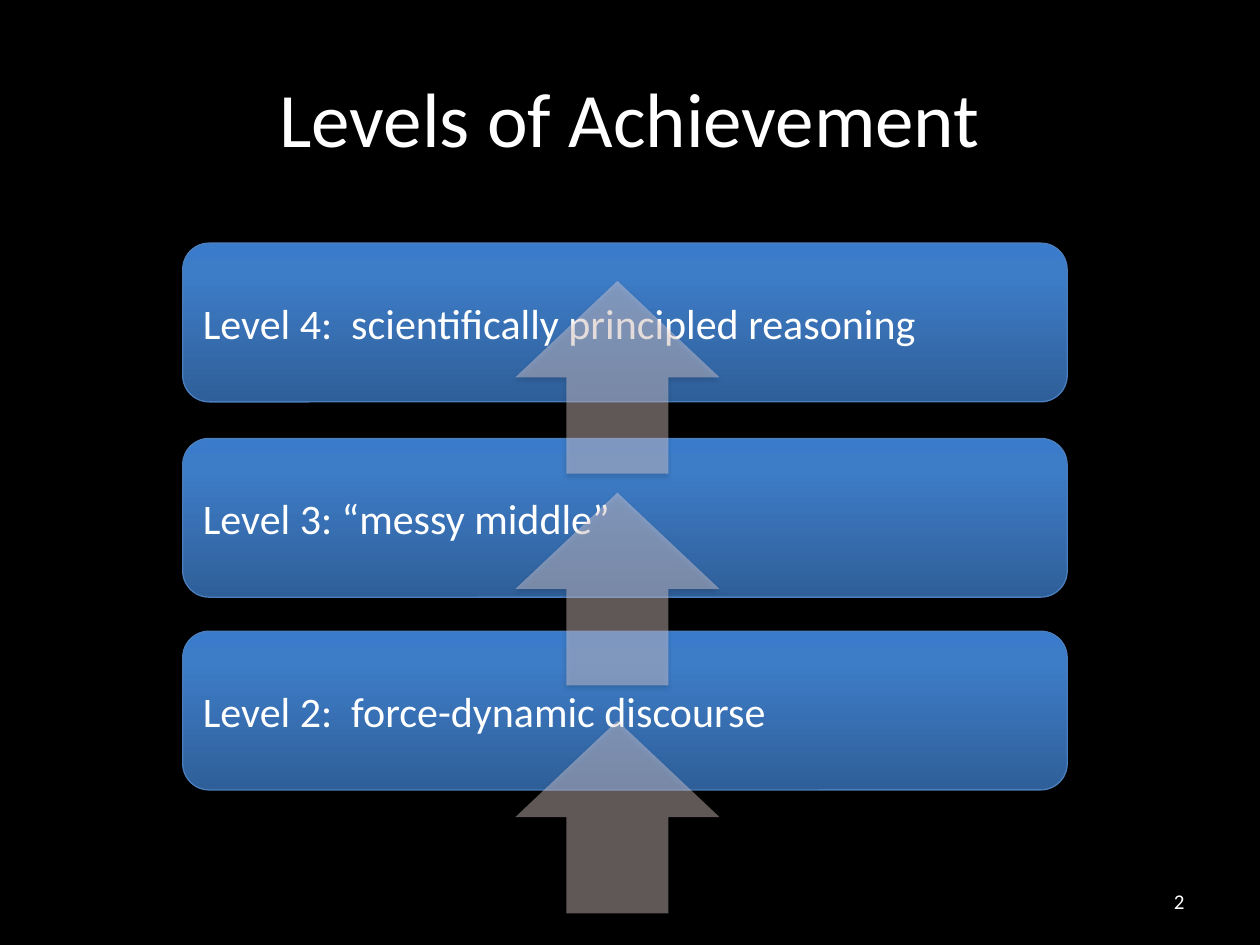
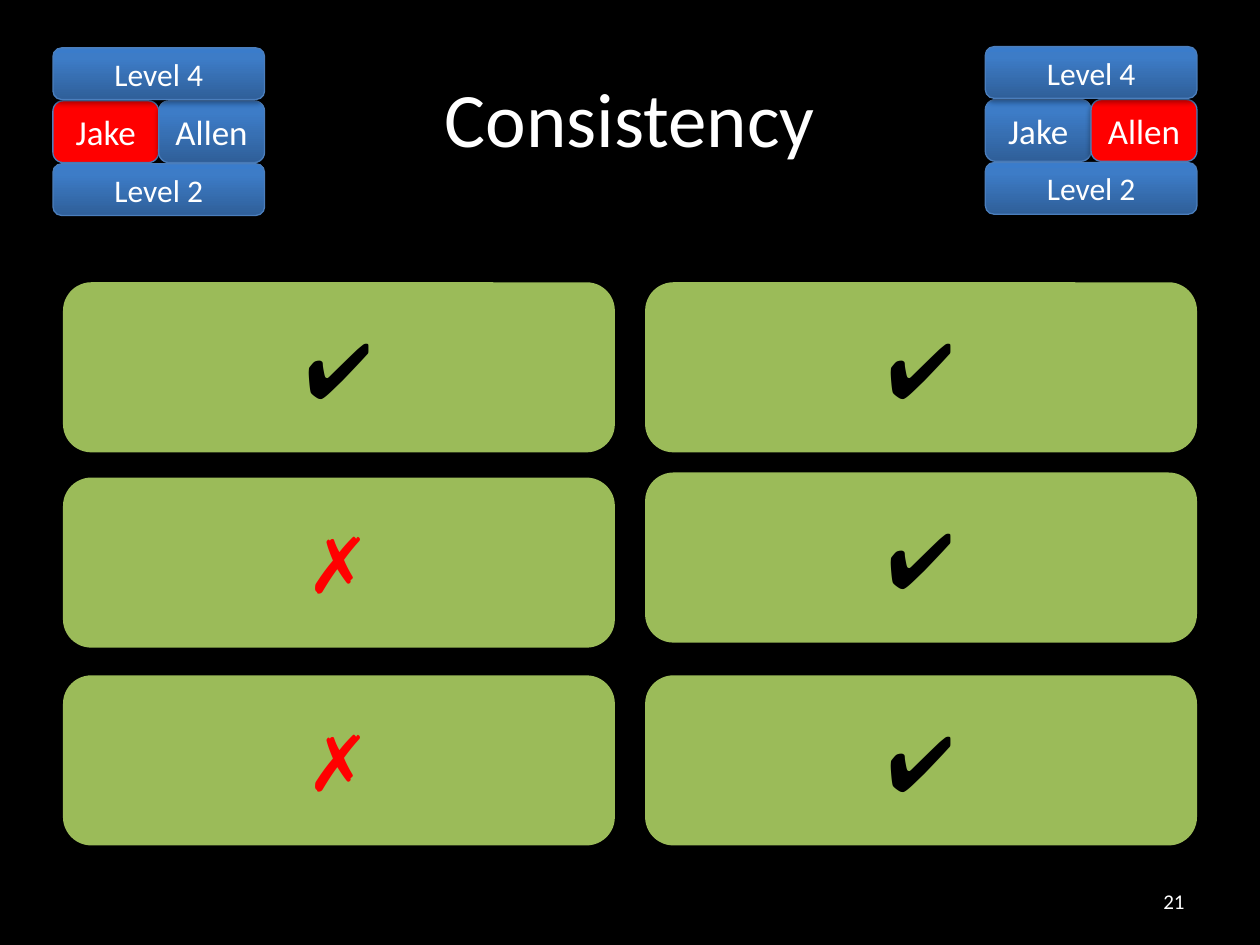
from pptx import Presentation
from pptx.dml.color import RGBColor
from pptx.enum.shapes import MSO_SHAPE
from pptx.enum.text import MSO_ANCHOR, PP_ALIGN
from pptx.oxml import parse_xml
from pptx.oxml.ns import nsdecls, qn
from pptx.util import Inches, Pt

COLORS = {
    "background": "000000",
    "text": "FFFFFF",
    "blue_dark": "2F5F99",
    "blue_mid": "3D7CC7",
    "blue_light": "3A7CCB",
    "outline": "4B7EBC",
    "arrow": "F2DCDB",
    "answer": "9BBB59",
    "yes": "000000",
    "no": "FF0000",
    "highlight": "FF0000",
}
BLUE_STOPS = [(0, "blue_dark"), (80, "blue_mid"), (100, "blue_light")]
LEVEL = MSO_SHAPE.FLOWCHART_ALTERNATE_PROCESS


def write(holder, text, size, color="text", align=PP_ALIGN.CENTER, font="Calibri"):
    frame = holder.text_frame
    frame.word_wrap = True
    frame.vertical_anchor = MSO_ANCHOR.MIDDLE
    line = frame.paragraphs[0]
    line.text = text
    line.alignment = align
    line.font.size = Pt(size)
    line.font.name = font
    line.font.color.rgb = RGBColor.from_string(COLORS[color])


def add_panel(slide, kind, left, top, width, height, fill=None, outlined=True):
    panel = slide.shapes.add_shape(
        kind, Inches(left), Inches(top), Inches(width), Inches(height))
    properties = panel._element.spPr
    if fill:
        panel.fill.solid()
        panel.fill.fore_color.rgb = RGBColor.from_string(COLORS[fill])
    else:
        panel.fill.background()
        stops = "".join(
            f'<a:gs pos="{at * 1000}"><a:srgbClr val="{COLORS[name]}"/></a:gs>'
            for at, name in BLUE_STOPS)
        properties.replace(properties.find(qn("a:noFill")), parse_xml(
            f'<a:gradFill {nsdecls("a")} rotWithShape="1"><a:gsLst>{stops}</a:gsLst>'
            '<a:lin ang="16200000" scaled="0"/></a:gradFill>'))
    if outlined:
        panel.line.color.rgb = RGBColor.from_string(COLORS["outline"])
        panel.line.width = Pt(0.75)
    else:
        panel.line.fill.background()
    panel.shadow.inherit = False
    properties.find(qn("a:effectLst")).append(parse_xml(
        f'<a:outerShdw {nsdecls("a")} blurRad="40000" dist="23000" dir="5400000" '
        'rotWithShape="0"><a:srgbClr val="000000"><a:alpha val="35000"/></a:srgbClr>'
        '</a:outerShdw>'))
    return panel


deck = Presentation()
deck.slide_width = Inches(10)
deck.slide_height = Inches(7.5)

slides = []
for heading, number in [("Levels of Achievement", "2"), ("Consistency", "21")]:
    slide = deck.slides.add_slide(deck.slide_layouts[6])
    slide.background.fill.solid()
    slide.background.fill.fore_color.rgb = RGBColor.from_string(COLORS["background"])
    title = slide.shapes.add_textbox(Inches(0), Inches(0.3), Inches(10), Inches(1.25))
    write(title, heading, 44)
    page = slide.shapes.add_textbox(Inches(7.17), Inches(6.95), Inches(2.33), Inches(0.4))
    write(page, number, 12, align=PP_ALIGN.RIGHT)
    slides.append(slide)
achievement, consistency = slides

for top, description in [
    (1.93, "Level 4:  scientifically principled reasoning"),
    (3.48, "Level 3: “messy middle”"),
    (5.01, "Level 2:  force-dynamic discourse"),
]:
    level = add_panel(achievement, LEVEL, 1.45, top, 7.02, 1.26)
    write(level, description, 24, align=PP_ALIGN.LEFT)

for top in (2.23, 3.91, 5.72):
    step = add_panel(achievement, MSO_SHAPE.UP_ARROW, 4.09, top, 1.62, 1.53,
                     "arrow", outlined=False)
    tint = step._element.spPr.find(qn("a:solidFill")).find(qn("a:srgbClr"))
    tint.append(parse_xml(f'<a:alpha {nsdecls("a")} val="40000"/>'))

STUDENTS = ["Jake", "Allen"]
STUDENT_WIDTH = 0.84
for left, top, chosen in [(0.42, 0.38, "Jake"), (7.82, 0.37, "Allen")]:
    for column, student in enumerate(STUDENTS):
        name_tag = add_panel(consistency, LEVEL, left + column * STUDENT_WIDTH, top + 0.42,
                             STUDENT_WIDTH, 0.49,
                             "highlight" if student == chosen else None)
        write(name_tag, student, 20)
    for offset, label in [(0, "Level 4"), (0.92, "Level 2")]:
        level = add_panel(consistency, LEVEL, left, top + offset, 2 * STUDENT_WIDTH, 0.41)
        write(level, label, 18)

for left, answers in [
    (0.5, [(2.24, "✔"), (3.79, "✗"), (5.36, "✗")]),
    (5.12, [(2.24, "✔"), (3.75, "✔"), (5.36, "✔")]),
]:
    for top, mark in answers:
        answer = add_panel(consistency, MSO_SHAPE.ROUNDED_RECTANGLE, left, top, 4.38, 1.35,
                           "answer", outlined=False)
        write(answer, mark, 44, "yes" if mark == "✔" else "no", font="Arial")

deck.save("out.pptx")
